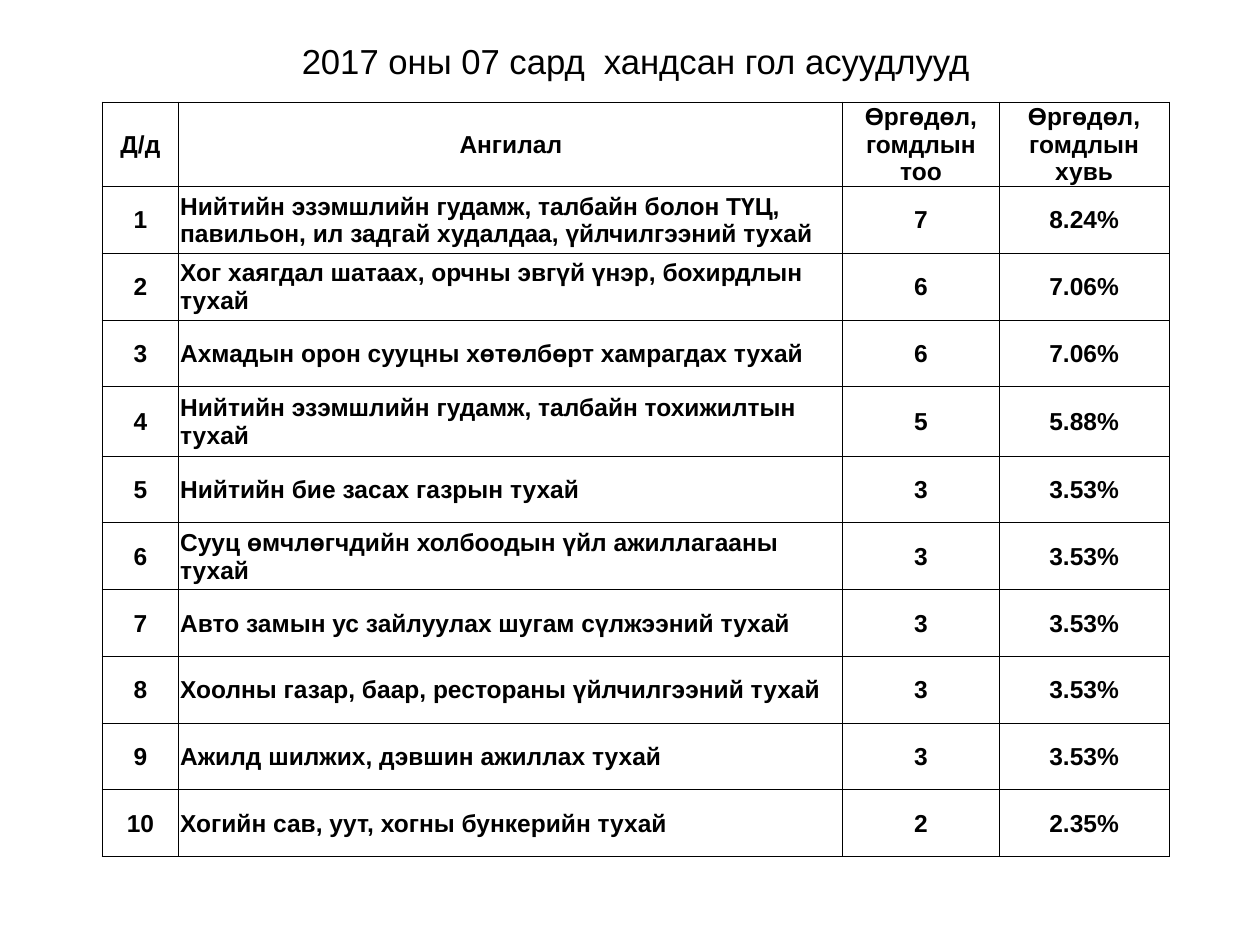
from pptx import Presentation
from pptx.dml.color import RGBColor
from pptx.enum.text import MSO_ANCHOR, MSO_AUTO_SIZE, PP_ALIGN
from pptx.oxml import parse_xml
from pptx.oxml.ns import nsdecls
from pptx.util import Inches, Pt

COLORS = {"text": "000000", "border": "000000", "fill": "FFFFFF"}
FONT = "Arial"
TITLE = "2017 оны 07 сард  хандсан гол асуудлууд"
HEADINGS = ("Д/д", "Ангилал", "Өргөдөл, гомдлын тоо", "Өргөдөл, гомдлын хувь")
ISSUES = [
    ("Нийтийн эзэмшлийн гудамж, талбайн болон ТҮЦ, павильон, ил задгай "
     "худалдаа, үйлчилгээний тухай", "7", "8.24%"),
    ("Хог хаягдал шатаах, орчны эвгүй үнэр, бохирдлын тухай", "6", "7.06%"),
    ("Ахмадын орон сууцны хөтөлбөрт хамрагдах тухай", "6", "7.06%"),
    ("Нийтийн эзэмшлийн гудамж, талбайн тохижилтын тухай", "5", "5.88%"),
    ("Нийтийн бие засах газрын тухай", "3", "3.53%"),
    ("Сууц өмчлөгчдийн холбоодын үйл ажиллагааны тухай", "3", "3.53%"),
    ("Авто замын ус зайлуулах шугам сүлжээний тухай", "3", "3.53%"),
    ("Хоолны газар, баар, рестораны үйлчилгээний тухай", "3", "3.53%"),
    ("Ажилд шилжих, дэвшин ажиллах тухай", "3", "3.53%"),
    ("Хогийн сав, уут, хогны бункерийн тухай", "2", "2.35%"),
]
COLUMN_WIDTHS = (0.61, 5.27, 1.24, 1.35)
ROW_HEIGHTS = [0.67] + [0.53] * 3 + [0.55] + [0.53] * 6
CATEGORY_COLUMN = 1


def write_text(frame, text, size, bold, align):
    para = frame.paragraphs[0]
    para.alignment = align
    span = para.add_run()
    span.text = text
    span.font.name = FONT
    span.font.size = Pt(size)
    span.font.bold = bold
    span.font.color.rgb = RGBColor.from_string(COLORS["text"])


def add_title(page, left, top, width, height):
    title = page.shapes.title
    title.left, title.top = Inches(left), Inches(top)
    title.width, title.height = Inches(width), Inches(height)
    frame = title.text_frame
    frame.word_wrap = True
    frame.auto_size = MSO_AUTO_SIZE.NONE
    frame.vertical_anchor = MSO_ANCHOR.MIDDLE
    write_text(frame, TITLE, 19.8, False, PP_ALIGN.CENTER)


def style_cell(cell):
    """Set insets, thin borders on all sides and a plain fill."""
    cell.margin_left = cell.margin_right = cell.margin_top = Inches(0.01)
    cell.margin_bottom = 0
    cell.vertical_anchor = MSO_ANCHOR.MIDDLE
    properties = cell._tc.get_or_add_tcPr()
    for side in ("lnL", "lnR", "lnT", "lnB"):
        properties.append(parse_xml(
            f'<a:{side} {nsdecls("a")} w="{Pt(0.5)}"><a:solidFill>'
            f'<a:srgbClr val="{COLORS["border"]}"/></a:solidFill></a:{side}>'))
    cell.fill.solid()
    cell.fill.fore_color.rgb = RGBColor.from_string(COLORS["fill"])


def add_issue_table(page, left, top, width, height):
    rows = [HEADINGS] + [(str(number), *issue)
                         for number, issue in enumerate(ISSUES, 1)]
    table = page.shapes.add_table(
        len(rows), len(HEADINGS), Inches(left), Inches(top),
        Inches(width), Inches(height)).table
    table.first_row = table.horz_banding = False
    for column, column_width in zip(table.columns, COLUMN_WIDTHS):
        column.width = Inches(column_width)
    for row, row_height in zip(table.rows, ROW_HEIGHTS):
        row.height = Inches(row_height)
    for row_index, texts in enumerate(rows):
        for column_index, text in enumerate(texts):
            cell = table.cell(row_index, column_index)
            style_cell(cell)
            is_category = row_index > 0 and column_index == CATEGORY_COLUMN
            align = PP_ALIGN.LEFT if is_category else PP_ALIGN.CENTER
            write_text(cell.text_frame, text, 14, True, align)


def main():
    deck = Presentation()
    deck.slide_width, deck.slide_height = Inches(10), Inches(7.5)
    page = deck.slides.add_slide(deck.slide_layouts.get_by_name("Title Only"))
    add_title(page, 0.81, 0.16, 8.47, 0.65)
    add_issue_table(page, 0.81, 0.81, sum(COLUMN_WIDTHS), sum(ROW_HEIGHTS))
    deck.save("out.pptx")


if __name__ == "__main__":
    main()
